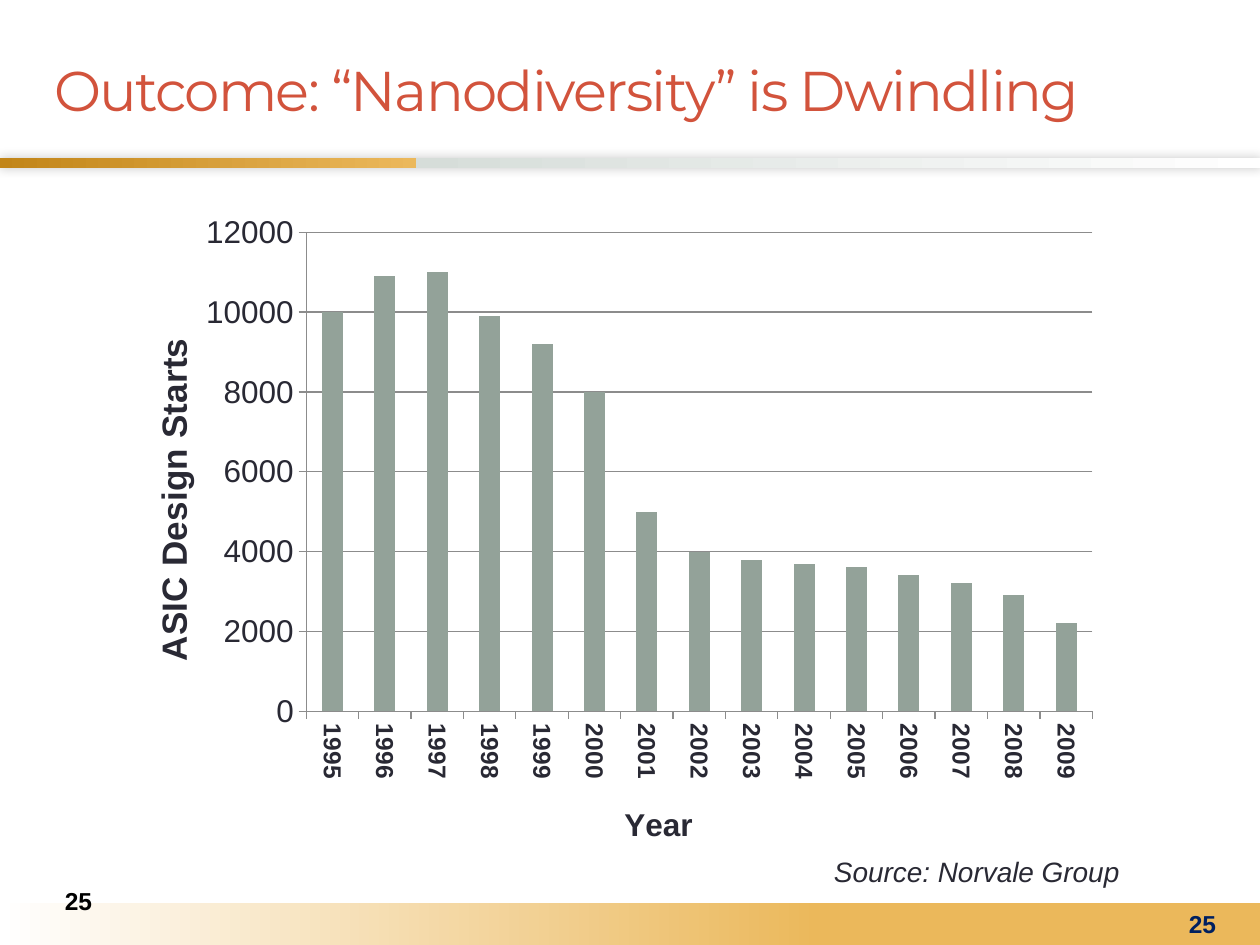
from lxml import etree
from pptx import Presentation
from pptx.chart.data import CategoryChartData
from pptx.dml.color import RGBColor
from pptx.enum.chart import XL_CHART_TYPE as ChartType, XL_TICK_MARK as TickMark
from pptx.enum.shapes import MSO_SHAPE as Shape
from pptx.enum.text import MSO_ANCHOR as Anchor, MSO_AUTO_SIZE as AutoSize, PP_ALIGN as Align
from pptx.oxml import parse_xml
from pptx.oxml.ns import nsdecls, qn
from pptx.util import Inches, Pt

COLORS = {
    "title": "D2533C", "text": "292934", "bar": "93A299", "line": "8C8C8C",
    "dark_gold": "C28518", "gold": "EBB85B", "mist": "D6DDD9",
    "white": "FFFFFF", "black": "000000", "navy": "002060",
}
DESIGN_STARTS = [10000, 10900, 11000, 9900, 9200, 8000, 5000, 4000,
                 3800, 3700, 3600, 3400, 3200, 2900, 2200]
FIRST_YEAR = 1995


def color(name):
    return RGBColor.from_string(COLORS[name])


def style_font(font, size, color_name, name="Arial", bold=False, italic=False):
    font.name, font.size = name, Pt(size)
    font.bold, font.italic = bold, italic
    font.color.rgb = color(color_name)


def add_band(page, top, height, stops, angle, shadow=False):
    """Add a full-width bar with a gradient of (percent, color name) stops."""
    band = page.shapes.add_shape(Shape.RECTANGLE, 0, Inches(top), Inches(10), Inches(height))
    band.shadow.inherit = False
    band.line.fill.background()
    band.fill.gradient()
    properties = band._element.spPr
    stop_xml = "".join(
        f'<a:gs pos="{percent * 1000}"><a:srgbClr val="{COLORS[name]}"/></a:gs>'
        for percent, name in stops)
    gradient = parse_xml(
        f'<a:gradFill {nsdecls("a")} rotWithShape="1"><a:gsLst>{stop_xml}</a:gsLst>'
        f'<a:lin ang="{angle * 60000}" scaled="0"/></a:gradFill>')
    properties.replace(properties.find(qn("a:gradFill")), gradient)
    if shadow:
        properties.find(qn("a:effectLst")).append(parse_xml(
            f'<a:outerShdw {nsdecls("a")} blurRad="{Pt(6)}" dist="0" dir="13500000">'
            f'<a:srgbClr val="{COLORS["black"]}"><a:alpha val="20000"/></a:srgbClr>'
            '</a:outerShdw>'))


def add_title(page, text):
    title = page.shapes.title
    title.left, title.top = Inches(0.33), Inches(0.17)
    title.width, title.height = Inches(9.42), Inches(1.08)
    frame = title.text_frame
    frame.text = text
    frame.vertical_anchor = Anchor.MIDDLE
    frame.auto_size = AutoSize.NONE
    para = frame.paragraphs[0]
    para.alignment = Align.LEFT
    span = para.runs[0]
    style_font(span.font, 32, "title", "Montserrat")
    span.font._element.set("spc", "-100")


def add_text(page, text, at, size, color_name, align=Align.LEFT,
             anchor=Anchor.TOP, wrap=True, **style):
    box = page.shapes.add_textbox(*map(Inches, at))
    frame = box.text_frame
    frame.text = text
    frame.word_wrap = wrap
    frame.vertical_anchor = anchor
    para = frame.paragraphs[0]
    para.alignment = align
    style_font(para.runs[0].font, size, color_name, **style)


def set_layout(parent, x, y, width=None, height=None):
    """Place a chart part by fractions of the chart area."""
    layout = parent.find(qn("c:layout"))
    if layout is None:
        layout = etree.Element(qn("c:layout"))
        parent.insert(0, layout)
    manual = etree.SubElement(layout, qn("c:manualLayout"))
    settings = [("xMode", "edge"), ("yMode", "edge"), ("x", x), ("y", y)]
    if width:
        settings = [("layoutTarget", "inner")] + settings + [("w", width), ("h", height)]
    for tag, value in settings:
        etree.SubElement(manual, qn(f"c:{tag}")).set("val", str(value))


def style_axis(axis, title, title_size, title_at, label_size, bold=False):
    axis.axis_title.text_frame.text = title
    span = axis.axis_title.text_frame.paragraphs[0].runs[0]
    style_font(span.font, title_size, "text", bold=True)
    set_layout(axis.axis_title._element, *title_at)
    axis.major_tick_mark = TickMark.OUTSIDE
    axis.minor_tick_mark = TickMark.NONE
    style_font(axis.tick_labels.font, label_size, "text", bold=bold)
    axis.format.line.color.rgb = color("line")


def add_starts_chart(page):
    data = CategoryChartData(number_format="0")
    data.categories = [str(FIRST_YEAR + i) for i in range(len(DESIGN_STARTS))]
    data.add_series("Series 1", DESIGN_STARTS)
    chart = page.shapes.add_chart(
        ChartType.COLUMN_CLUSTERED, Inches(0.83), Inches(1.58),
        Inches(8), Inches(5.28), data).chart
    chart.has_title = chart.has_legend = False
    style_font(chart.font, 10, "text")
    set_layout(chart._chartSpace.chart.plotArea, 0.2, 0.05, 0.78, 0.72)

    # Columns
    plot = chart.plots[0]
    plot.gap_width = 150
    plot.vary_by_categories = False
    fill = plot.series[0].format.fill
    fill.solid()
    fill.fore_color.rgb = color("bar")

    # Axes, with the years turned to read downwards
    years, starts = chart.category_axis, chart.value_axis
    style_axis(years, "Year", 18, (0.51, 0.9), 14, bold=True)
    years._element.txPr.find(qn("a:bodyPr")).set("rot", "5400000")
    style_axis(starts, "ASIC Design Starts", 20, (0.04, 0.2), 18)
    starts.axis_title.text_frame._element.find(qn("a:bodyPr")).set("rot", "-5400000")
    starts.minimum_scale, starts.maximum_scale, starts.major_unit = 0, 12000, 2000
    starts.tick_labels.number_format = "0"
    starts.tick_labels.number_format_is_linked = False
    starts.major_gridlines.format.line.color.rgb = color("line")


def main():
    deck = Presentation()
    deck.slide_width, deck.slide_height = Inches(10), Inches(7.5)
    page = deck.slides.add_slide(deck.slide_layouts[5])

    # Bands below the title and along the foot
    add_band(page, 1.25, 0.08, [(0, "dark_gold"), (33, "gold"), (33, "mist"), (100, "white")],
             angle=0, shadow=True)
    add_band(page, 7.17, 0.33, [(0, "gold"), (35, "gold"), (100, "white")], angle=180)

    add_title(page, "Outcome: “Nanodiversity” is Dwindling")
    add_starts_chart(page)

    # Source and page numbers
    add_text(page, "Source: Norvale Group", (6.52, 6.73, 2.49, 0.37), 16, "text",
             wrap=False, italic=True)
    for at, color_name in [((0, 6.95, 0.83, 0.4), "black"), ((8.83, 7.17, 0.92, 0.33), "navy")]:
        add_text(page, "25", at, 14, color_name, Align.RIGHT, Anchor.MIDDLE, bold=True)

    deck.save("out.pptx")


if __name__ == "__main__":
    main()
